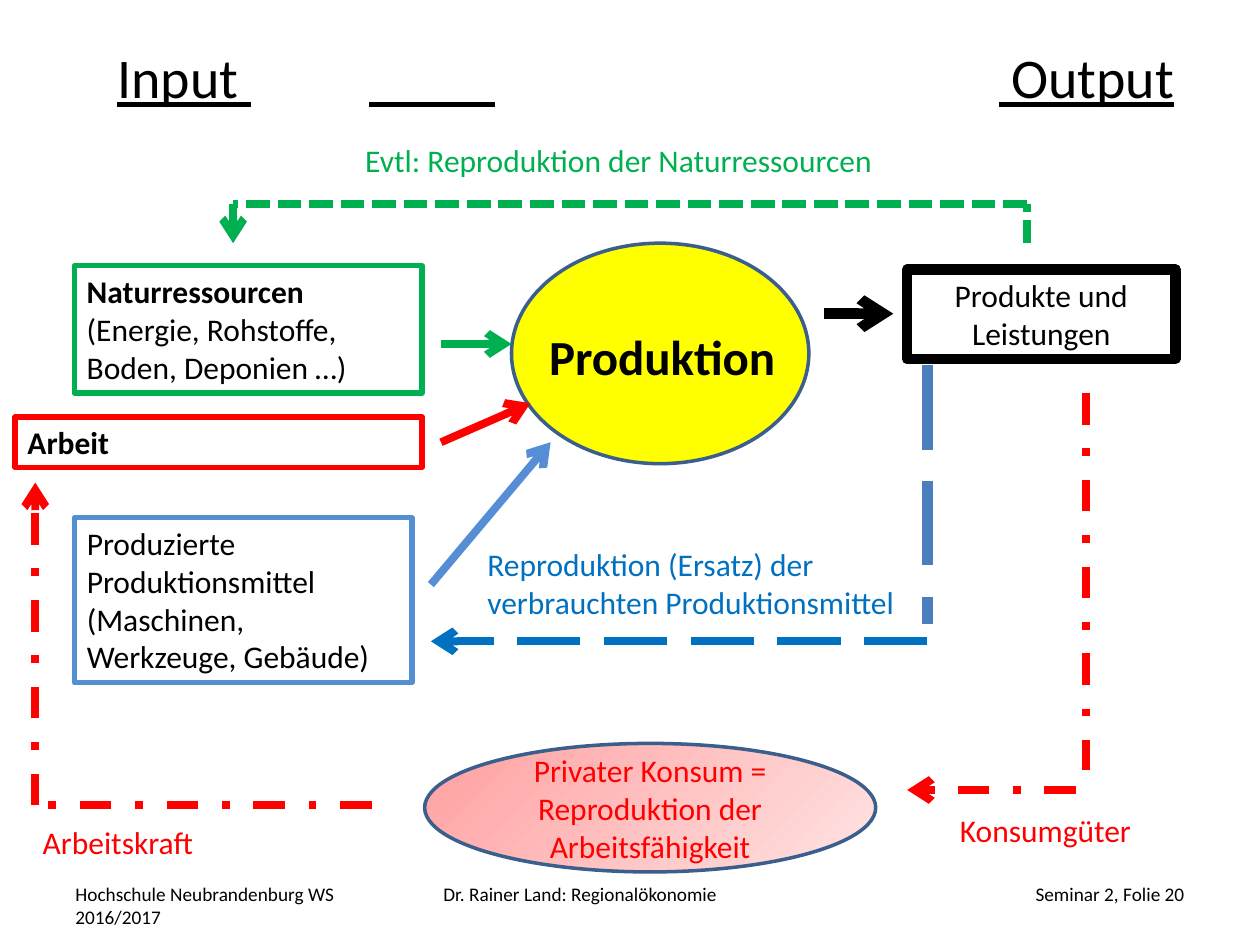
from lxml import etree
from pptx import Presentation
from pptx.dml.color import RGBColor
from pptx.enum.dml import MSO_LINE
from pptx.enum.shapes import MSO_CONNECTOR, MSO_SHAPE
from pptx.enum.text import MSO_ANCHOR, PP_ALIGN
from pptx.oxml.ns import qn
from pptx.util import Inches, Pt

LEFT, MID, RIGHT = PP_ALIGN.LEFT, PP_ALIGN.CENTER, PP_ALIGN.RIGHT
TOP, CENTER = MSO_ANCHOR.TOP, MSO_ANCHOR.MIDDLE
RECT, OVAL = MSO_SHAPE.RECTANGLE, MSO_SHAPE.OVAL
LONG, DOT, SHORT = MSO_LINE.LONG_DASH, MSO_LINE.DASH_DOT, MSO_LINE.SQUARE_DOT
FONT = "Calibri"

COLORS = {
    "black": "000000", "green": "00B050", "red": "FF0000", "sky": "558ED5",
    "blue": "0070C0", "steel": "4B7EBC", "navy": "3A5F8C", "yellow": "FFFF00",
    "rose": "FFA0A0", "blush": "FFE3E3",
}

INPUT_X, INPUT_END, ARROW_X = 0.59, 3.35, 3.5
OUT_X, OUT_W = 7.2, 2.13
WORK_X, GOODS_X, MEANS_X = 0.28, 8.62, 7.36
NATURE_X, PRODUCT_X = 1.85, 8.15
LOOP_Y, NATURE_Y = 1.62, 1.93
MEANS_Y, WORK_Y, GOODS_Y = 5.09, 6.39, 6.27
FOOT_Y, FOOT_H = 6.95, 0.4

SHAPES = [
    (OVAL, (4.06, 1.93, 2.36, 1.75), "yellow", "navy", 2, [], LEFT, "black"),
    (RECT, (INPUT_X, 2.11, INPUT_END - INPUT_X, 1.01), None, "green", 3,
     [("Naturressourcen", True), ("(Energie, Rohstoffe, Boden, Deponien …)", False)],
     LEFT, "black"),
    (RECT, (0.12, 3.31, INPUT_END - 0.12, 0.4), None, "red", 3,
     [("Arbeit", True)], LEFT, "black"),
    (RECT, (INPUT_X, 4.11, 2.68, 1.31), None, "sky", 3,
     [("Produzierte Produktionsmittel (Maschinen, Werkzeuge, Gebäude)", False)],
     LEFT, "black"),
    (RECT, (OUT_X, 2.14, OUT_W, 0.71), None, "black", 6,
     [("Produkte und Leistungen", False)], MID, "black"),
    (OVAL, (3.37, 5.9, 3.58, 1.02), ("rose", "blush"), "navy", 2,
     [("Privater Konsum = Reproduktion der Arbeitsfähigkeit", False)], MID, "red"),
]

LABELS = [
    ((4.21, 2.54, 2.09, 0.57), "Produktion", 28, "black", MID, True),
    ((3.77, 4.28, 3.47, 0.71),
     "Reproduktion (Ersatz) der \vverbrauchten Produktionsmittel", 18, "blue", LEFT, False),
    ((7.52, 6.39, 1.81, 0.4), "Konsumgüter", 18, "red", LEFT, False),
    ((0.24, 6.48, 2.68, 0.4), "Arbeitskraft", 18, "red", LEFT, False),
    ((2.8, 1.07, 4.29, 0.4), "Evtl: Reproduktion der Naturressourcen", 18, "green", LEFT, False),
    ((0.5, FOOT_Y, 2.33, FOOT_H), "Hochschule Neubrandenburg WS 2016/2017", 11, "black", LEFT, False),
    ((3.42, FOOT_Y, 3.17, FOOT_H), "Dr. Rainer Land: Regionalökonomie", 11, "black", LEFT, False),
    ((7.17, FOOT_Y, 2.33, FOOT_H), "Seminar 2, Folie 20", 11, "black", RIGHT, False),
]

LINES = [
    ((2.93, 0.83), (3.93, 0.83), "black", 3, None, False),
    ((ARROW_X, 2.73), (4.06, 2.73), "green", 4.5, None, True),
    ((ARROW_X, 3.51), (4.21, 3.2), "red", 4.5, None, True),
    ((3.42, 4.64), (4.37, 3.51), "sky", 4.5, None, True),
    ((6.54, 2.49), (7.09, 2.49), "black", 6, None, True),
    ((MEANS_X, MEANS_Y), (3.42, MEANS_Y), "blue", 4.5, LONG, True),
    ((MEANS_X, 2.9), (MEANS_X, 4.95), "steel", 6, LONG, False),
    ((GOODS_X, 3.12), (GOODS_X, 6.11), "red", 4.5, DOT, False),
    ((8.54, GOODS_Y), (OUT_X, GOODS_Y), "red", 4.5, DOT, True),
    ((WORK_X, WORK_Y), (WORK_X, 3.83), "red", 4.5, DOT, True),
    ((2.95, WORK_Y), (WORK_X, WORK_Y), "red", 4.5, DOT, False),
    ((PRODUCT_X, NATURE_Y), (PRODUCT_X, LOOP_Y), "green", 4.5, SHORT, False),
    ((PRODUCT_X, LOOP_Y), (NATURE_X, LOOP_Y), "green", 4.5, SHORT, False),
    ((NATURE_X, LOOP_Y), (NATURE_X, NATURE_Y), "green", 4.5, SHORT, True),
]


def rgb(name):
    return RGBColor.from_string(COLORS[name])


def place(box):
    return [Inches(v) for v in box]


def write(frame, rows, size, color, align, anchor):
    frame.word_wrap = True
    frame.vertical_anchor = anchor
    for i, (text, bold) in enumerate(rows):
        para = frame.add_paragraph() if i else frame.paragraphs[0]
        para.text = text
        para.alignment = align
        font = para.font
        font.name, font.size, font.bold = FONT, Pt(size), bold
        font.color.rgb = rgb(color)


def paint(fill, color):
    if color is None:
        fill.background()
    elif isinstance(color, tuple):
        fill.gradient()
        fill.gradient_angle = 315
        for stop, name in zip(fill.gradient_stops, color):
            stop.color.rgb = rgb(name)
    else:
        fill.solid()
        fill.fore_color.rgb = rgb(color)


def head(slide):
    title = slide.shapes.title
    title.left, title.top, title.width, title.height = place((0.83, 0.3, 8.67, 0.61))
    write(title.text_frame, [("Input \t Output", False)], 32, "black", LEFT, CENTER)
    para = title.text_frame.paragraphs[0]
    para.font.underline = True
    tabs = etree.Element(qn("a:tabLst"))
    etree.SubElement(tabs, qn("a:tab"), pos=str(Inches(8.39)), algn="r")
    para.font._element.addprevious(tabs)


def join(slide, start, end, color, width, dash, arrow):
    link = slide.shapes.add_connector(MSO_CONNECTOR.STRAIGHT, *place(start + end))
    line = link.line
    line.color.rgb = rgb(color)
    line.width = Pt(width)
    if dash:
        line.dash_style = dash
    if arrow:
        etree.SubElement(line._get_or_add_ln(), qn("a:tailEnd"), type="arrow")
    etree.SubElement(link._element.spPr, qn("a:effectLst"))


def main():
    deck = Presentation()
    deck.slide_width, deck.slide_height = Inches(10), Inches(7.5)
    slide = deck.slides.add_slide(deck.slide_layouts[5])
    head(slide)
    for kind, box, fill, edge, width, rows, align, ink in SHAPES:
        shape = slide.shapes.add_shape(kind, *place(box))
        shape.shadow.inherit = False
        paint(shape.fill, fill)
        shape.line.color.rgb = rgb(edge)
        shape.line.width = Pt(width)
        write(shape.text_frame, rows, 18, ink, align, CENTER if kind == OVAL else TOP)
    for box, text, size, color, align, bold in LABELS:
        label = slide.shapes.add_textbox(*place(box))
        write(label.text_frame, [(text, bold)], size, color, align, TOP)
    for line in LINES:
        join(slide, *line)
    deck.save("out.pptx")


if __name__ == "__main__":
    main()
